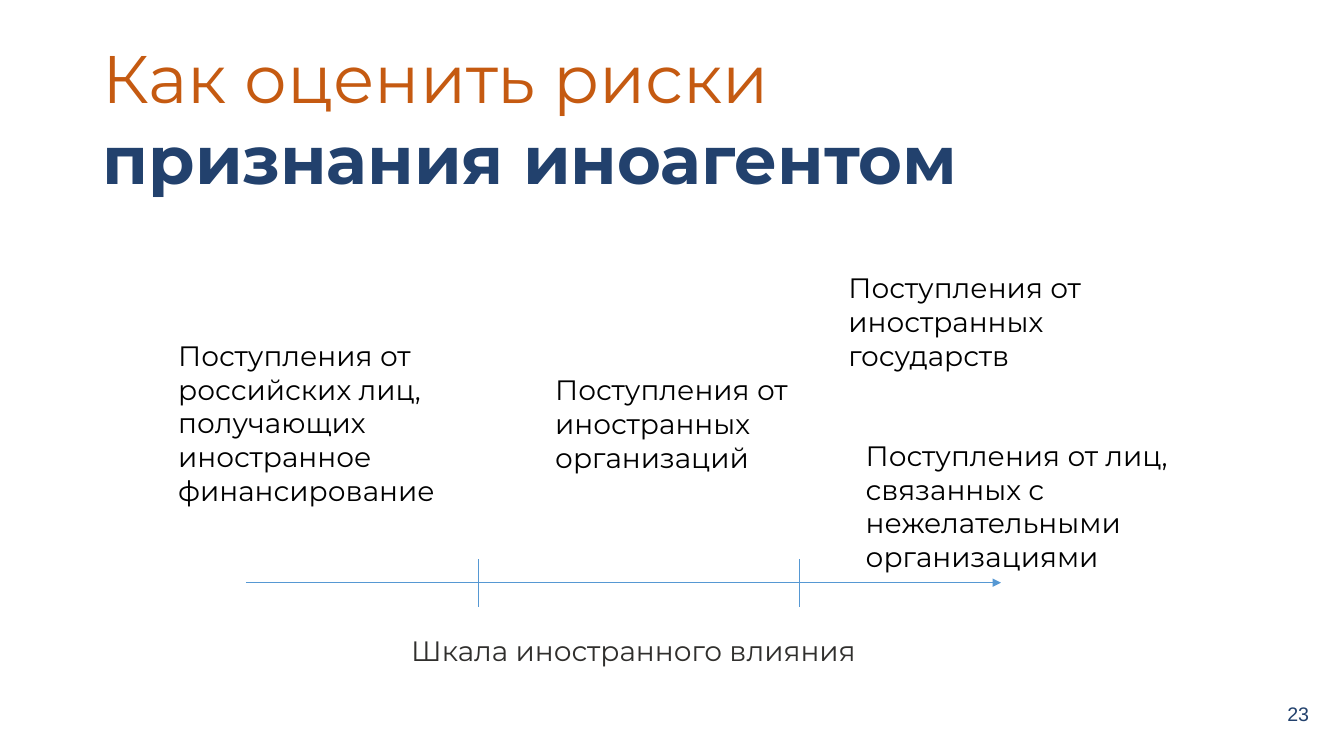
from lxml import etree
from pptx import Presentation
from pptx.dml.color import RGBColor
from pptx.enum.shapes import MSO_CONNECTOR
from pptx.enum.text import MSO_ANCHOR, PP_ALIGN
from pptx.oxml.ns import qn
from pptx.util import Pt

STRAIGHT = MSO_CONNECTOR.STRAIGHT
TOP, MIDDLE = MSO_ANCHOR.TOP, MSO_ANCHOR.MIDDLE
LEFT, CENTER = PP_ALIGN.LEFT, PP_ALIGN.CENTER

ORANGE, NAVY, BLUE = "C55A11", "22416D", "5698D3"
GRAPHITE, BLACK = "302F2D", "000000"

AXIS_Y = 416.2
TICK_TOP, TICK_BOTTOM = 399.6, 433.4
SOURCE_WIDTH = 257

# Funding sources: left, top, height, text
SOURCES = [
    (599, 190, 80, "Поступления от иностранных государств"),
    (389.5, 262.8, 80, "Поступления от иностранных организаций"),
    (611.3, 309.6, 104.4,
     "Поступления от лиц, связанных с нежелательными организациями"),
    (120.2, 238.3, 128.2,
     "Поступления от российских лиц, получающих иностранное финансирование"),
]


def color(value):
    return RGBColor.from_string(value)


def set_values(target, values):
    for name, value in values.items():
        setattr(target, name, value)


def add_text(slide, box, runs, size=20, font="Montserrat", inset_y=3.6,
             anchor=TOP, align=LEFT, wrap=True):
    """Add a text box; runs holds (text, colour, bold) triples."""
    shape = slide.shapes.add_textbox(*map(Pt, box))
    set_values(shape.text_frame, {
        "word_wrap": wrap, "vertical_anchor": anchor,
        "margin_left": Pt(7.2), "margin_right": Pt(7.2),
        "margin_top": Pt(inset_y), "margin_bottom": Pt(inset_y),
    })
    paragraph = shape.text_frame.paragraphs[0]
    paragraph.alignment = align
    for text, text_color, bold in runs:
        run = paragraph.add_run()
        run.text = text
        set_values(run.font, {"name": font, "size": Pt(size), "bold": bold})
        run.font.color.rgb = color(text_color)


def add_line(slide, ends, arrow=False):
    connector = slide.shapes.add_connector(STRAIGHT, *map(Pt, ends))
    connector.line.width = Pt(0.75)
    connector.line.color.rgb = color(BLUE)
    if arrow:
        outline = connector.line._get_or_add_ln()
        etree.SubElement(outline, qn("a:tailEnd"), type="triangle")
    etree.SubElement(connector._element.spPr, qn("a:effectLst"))


def main():
    presentation = Presentation()
    set_values(presentation, {"slide_width": Pt(960), "slide_height": Pt(540)})
    slide = presentation.slides.add_slide(presentation.slide_layouts[6])

    # Title and slide number
    add_text(slide, (66.2, 18.7, 719.3, 70.6),
             [("Как оценить риски ", ORANGE, False),
              ("признания иноагентом", NAVY, True)],
             size=48, inset_y=7.2)
    add_text(slide, (912.2, 493.2, 30.2, 33.1), [("23", NAVY, False)],
             size=14, font="Arial", inset_y=7.2, anchor=MIDDLE,
             align=CENTER, wrap=False)

    # Scale of influence
    add_line(slide, (175.7, AXIS_Y, 715, AXIS_Y), arrow=True)
    add_text(slide, (286.6, 449.3, 346.3, 31.7),
             [("Шкала иностранного влияния", GRAPHITE, False)])
    for x in (571, 342):
        add_line(slide, (x, TICK_TOP, x, TICK_BOTTOM))

    # Funding sources along the scale
    for left, top, height, text in SOURCES:
        add_text(slide, (left, top, SOURCE_WIDTH, height),
                 [(text, BLACK, False)])

    presentation.save("out.pptx")


if __name__ == "__main__":
    main()
